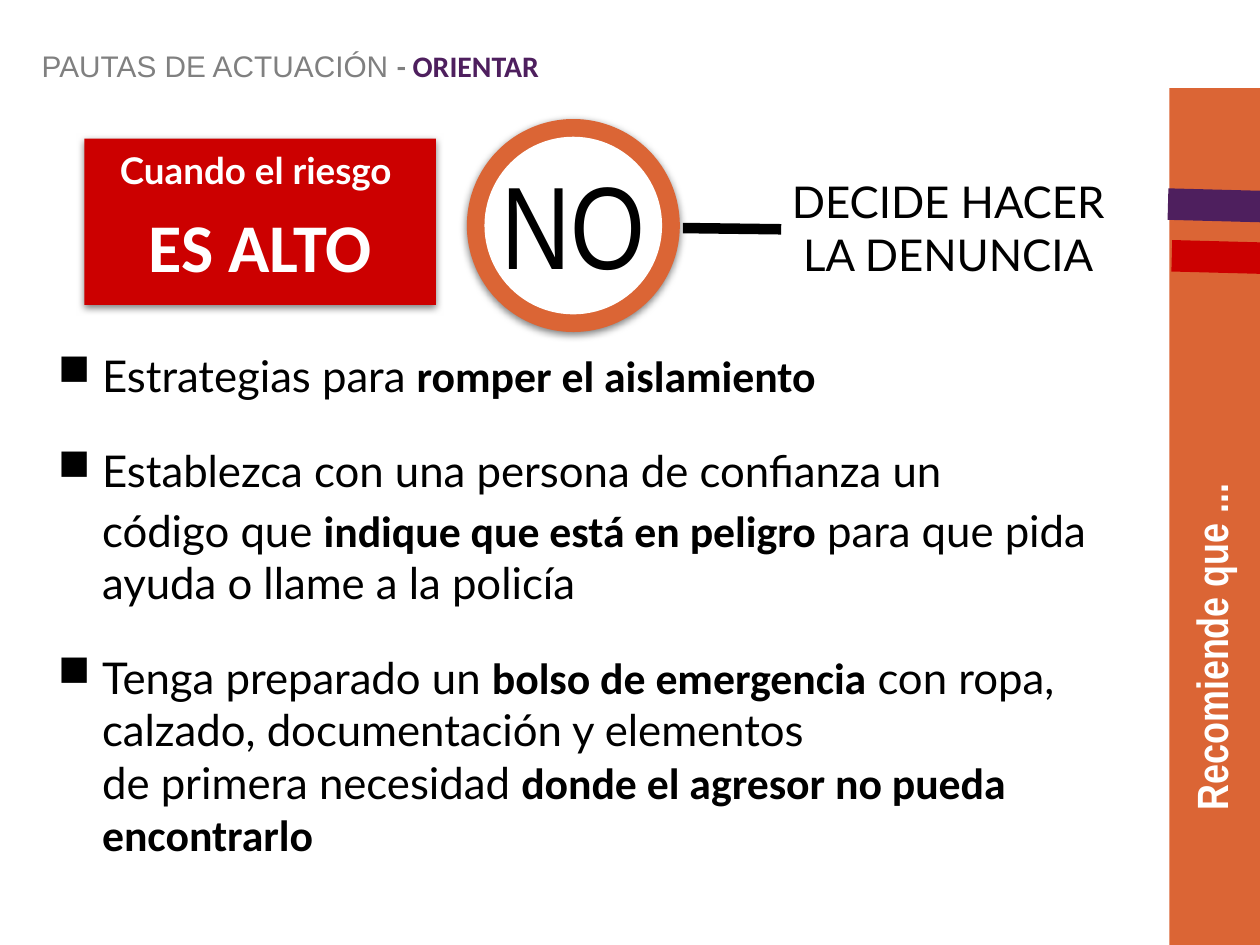
from lxml.etree import SubElement
from pptx import Presentation
from pptx.dml.color import RGBColor
from pptx.enum.shapes import MSO_CONNECTOR, MSO_SHAPE
from pptx.enum.text import MSO_ANCHOR, PP_ALIGN
from pptx.oxml.ns import qn
from pptx.util import Inches, Pt

ORANGE = RGBColor(0xDB, 0x65, 0x35)
RED = RGBColor(0xCC, 0x00, 0x00)
PURPLE = RGBColor(0x4E, 0x1F, 0x5E)
GREY = RGBColor(0x80, 0x80, 0x80)
BLACK = RGBColor(0, 0, 0)
WHITE = RGBColor(0xFF, 0xFF, 0xFF)

WIDTH, HEIGHT = 10, 7.5
BODY_SIZE, INDENT = 25, 0.35
TIGHT, GAP = 4.2, 24

HEADING = [("PAUTAS DE ACTUACIÓN ", "Arial", False, GREY),
           ("- ", "Calibri", True, GREY),
           ("ORIENTAR", "Calibri", True, PURPLE)]
RISK = [("Cuando el riesgo ", "Lato", 21), ("ES ALTO", "Calibri", 39)]
ANSWER = "NO"
DECISION = "DECIDE HACER LA DENUNCIA"
SIDE_TITLE = "Recomiende que ..."
ADVICE = [
    (True, TIGHT, ["Estrategias para ", "romper el aislamiento"]),
    (True, GAP, ["Establezca con una persona de confianza un"]),
    (False, TIGHT, ["código que ", "indique que está en peligro",
                    " para que pida ayuda o llame a la policía"]),
    (True, GAP, ["Tenga preparado un ", "bolso de emergencia",
                 " con ropa, calzado, documentación y elementos"]),
    (False, 0, ["de primera necesidad ",
                "donde el agresor no pueda encontrarlo"]),
]

prs = Presentation()
prs.slide_width, prs.slide_height = Inches(WIDTH), Inches(HEIGHT)
slide = prs.slides.add_slide(prs.slide_layouts[6])
shapes = slide.shapes


def add_block(kind, left, top, width, height, fill, shadow=False, rotation=0):
    block = shapes.add_shape(kind, *map(Inches, (left, top, width, height)))
    block.shadow.inherit = False
    block.fill.solid()
    block.fill.fore_color.rgb = fill
    block.line.fill.background()
    block.rotation = rotation
    if shadow:
        effects = block._element.spPr.find(qn("a:effectLst"))
        outer = SubElement(effects, qn("a:outerShdw"), blurRad=str(Pt(4.5)),
                           dist=str(Pt(1.5)), dir="5400000", rotWithShape="0")
        tint = SubElement(outer, qn("a:srgbClr"), val="000000")
        SubElement(tint, qn("a:alpha"), val="50000")
    return block


def add_text_area(left, top, width, height):
    return shapes.add_textbox(*map(Inches, (left, top, width, height)))


def prepare(holder, inset=0.07, anchor=MSO_ANCHOR.TOP):
    frame = holder.text_frame
    frame.word_wrap = True
    frame.vertical_anchor = anchor
    frame.margin_left = frame.margin_right = Inches(inset)
    frame.margin_top = frame.margin_bottom = Inches(inset)
    return frame


def write(paragraph, text, font="Lato", size=BODY_SIZE, bold=False,
          color=BLACK, align=PP_ALIGN.LEFT, before=0):
    paragraph.alignment = align
    paragraph.space_before = Pt(before)
    run = paragraph.add_run()
    run.text = text
    run.font.name, run.font.size, run.font.bold = font, Pt(size), bold
    run.font.color.rgb = color


def next_paragraph(frame, index):
    return frame.add_paragraph() if index else frame.paragraphs[0]


def indent(paragraph, bullet):
    props = paragraph._p.get_or_add_pPr()
    props.set("marL", str(Inches(INDENT)))
    props.set("indent", str(Inches(-INDENT if bullet else 0)))
    if bullet:
        SubElement(props, qn("a:buChar"), char="■")
    else:
        SubElement(props, qn("a:buNone"))


def add_line(start, end, color, weight):
    line = shapes.add_connector(MSO_CONNECTOR.STRAIGHT,
                                *map(Inches, (*start, *end)))
    line.line.color.rgb = color
    line.line.width = Pt(weight)
    SubElement(line._element.spPr, qn("a:effectLst"))


heading = prepare(add_text_area(0.29, 0.35, 8.59, 0.35), 0.04,
                  MSO_ANCHOR.BOTTOM).paragraphs[0]
heading.line_spacing = 0.8
for text, font, bold, color in HEADING:
    write(heading, text, font=font, size=17, bold=bold, color=color)

advice = prepare(add_text_area(0.39, 2.7, 8.85, 4.91))
for index, (bullet, before, parts) in enumerate(ADVICE):
    paragraph = next_paragraph(advice, index)
    for position, text in enumerate(parts):
        strong = position % 2 == 1
        write(paragraph, text, font="Calibri" if strong else "Lato",
              bold=strong, before=before)
    indent(paragraph, bullet)

add_block(MSO_SHAPE.RECTANGLE, 9.28, 0.7, 0.75, HEIGHT - 0.7, ORANGE)
side = add_block(MSO_SHAPE.RECTANGLE, 7.07, 3.62, 5.14, 0.62, ORANGE,
                 rotation=270)
write(prepare(side).paragraphs[0], SIDE_TITLE, font="Arial Narrow",
      bold=True, color=WHITE)

risk = prepare(add_block(MSO_SHAPE.RECTANGLE, 0.67, 1.1, 2.79, 1.32, RED,
                         shadow=True))
for index, (text, font, size) in enumerate(RISK):
    write(next_paragraph(risk, index), text, font=font, size=size, bold=True,
          color=WHITE, align=PP_ALIGN.CENTER, before=7)

decision = prepare(add_text_area(6.17, 1.32, 2.71, 1.27))
write(decision.paragraphs[0], DECISION, align=PP_ALIGN.CENTER)

for diameter, fill in ((1.69, ORANGE), (1.41, WHITE)):
    add_block(MSO_SHAPE.OVAL, 4.55 - diameter / 2, 1.79 - diameter / 2,
              diameter, diameter, fill, shadow=fill == ORANGE)
answer = prepare(add_text_area(3.66, 1.14, 1.78, 1.41))
write(answer.paragraphs[0], ANSWER, font="Arial Narrow", size=67,
      align=PP_ALIGN.CENTER)

add_line((6.2, 1.82), (5.42, 1.81), BLACK, 6)
add_line((9.3, 2.03), (10.05, 2.05), RED, 18)
add_line((9.27, 1.62), (10.03, 1.64), PURPLE, 18)

prs.save("out.pptx")
